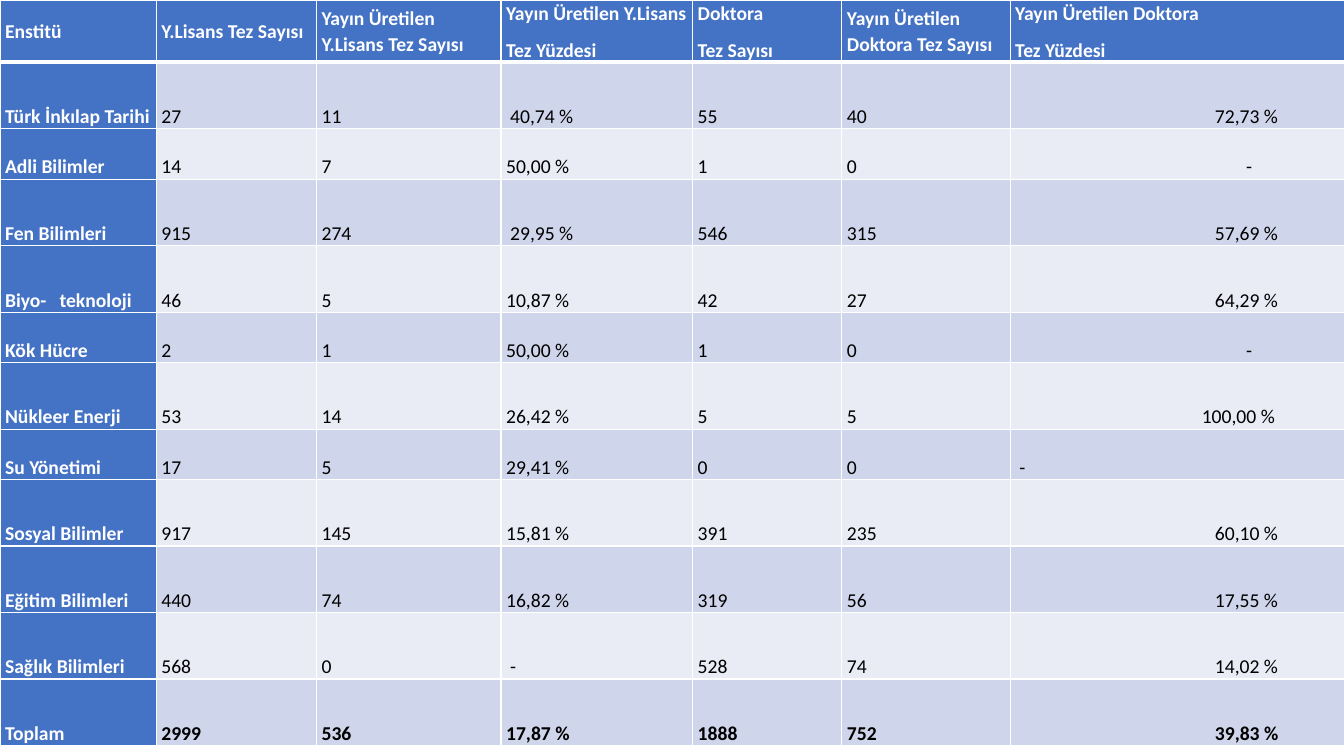
from dataclasses import dataclass

from lxml.etree import SubElement
from pptx import Presentation
from pptx.dml.color import RGBColor
from pptx.enum.text import MSO_ANCHOR
from pptx.oxml.ns import qn
from pptx.table import _Cell
from pptx.util import Emu, Pt

PX = 9144
SLIDE_WIDTH, SLIDE_HEIGHT = 1333, 750
COLUMN_WIDTHS = (155, 159, 183, 190, 148, 167, 407)
HEADER_HEIGHT, TALL, SHORT = 61, 66, 50
MASTERS_RATE, DOCTORAL_RATE = 3, 6
NUDGE, RATE, FULL_RATE, DASH = 4, 198, 185, 229
NAME_TAB = 54


@dataclass(frozen=True)
class Theme:
    font: str = "Calibri"
    size: int = 14
    accent: str = "4472C4"
    bands: tuple[str, str] = ("CFD5EA", "E9EBF5")
    light: str = "FFFFFF"
    dark: str = "000000"
    thin: int = 1
    thick: int = 3
    line_spacing: float = 1.07
    space_after: int = 8


@dataclass(frozen=True)
class Institute:
    height: int
    values: tuple[str, ...]
    masters_indent: int = 0
    doctoral_indent: int = RATE
    bold: bool = False


@dataclass(frozen=True)
class CellStyle:
    fill: str
    color: str
    bold: bool
    anchor: MSO_ANCHOR = MSO_ANCHOR.BOTTOM
    indent: int = 0
    top: int = 1
    bottom: int = 1


THEME = Theme()
HEADERS = (
    "Enstitü",
    "Y.Lisans Tez Sayısı",
    "Yayın Üretilen Y.Lisans Tez Sayısı",
    "Yayın Üretilen Y.Lisans\nTez Yüzdesi",
    "Doktora\nTez Sayısı",
    "Yayın Üretilen Doktora Tez Sayısı",
    "Yayın Üretilen Doktora\nTez Yüzdesi",
)
INSTITUTES = (
    Institute(TALL, ("Türk İnkılap Tarihi", "27", "11", "40,74 %", "55", "40", "72,73 %"), NUDGE),
    Institute(SHORT, ("Adli Bilimler", "14", "7", "50,00 %", "1", "0", "-"), 0, DASH),
    Institute(TALL, ("Fen Bilimleri", "915", "274", "29,95 %", "546", "315", "57,69 %"), NUDGE),
    Institute(TALL, ("Biyo-\tteknoloji", "46", "5", "10,87 %", "42", "27", "64,29 %")),
    Institute(SHORT, ("Kök Hücre", "2", "1", "50,00 %", "1", "0", "-"), 0, DASH),
    Institute(TALL, ("Nükleer Enerji", "53", "14", "26,42 %", "5", "5", "100,00 %"), 0, FULL_RATE),
    Institute(SHORT, ("Su Yönetimi", "17", "5", "29,41 %", "0", "0", "-"), 0, NUDGE),
    Institute(TALL, ("Sosyal Bilimler", "917", "145", "15,81 %", "391", "235", "60,10 %")),
    Institute(TALL, ("Eğitim Bilimleri", "440", "74", "16,82 %", "319", "56", "17,55 %")),
    Institute(TALL, ("Sağlık Bilimleri", "568", "0", "-", "528", "74", "14,02 %"), NUDGE),
    Institute(TALL, ("Toplam", "2999", "536", "17,87 %", "1888", "752", "39,83 %"), bold=True),
)


def px(length: int) -> Emu:
    return Emu(length * PX)


def apply(target: object, values: dict[str, object]) -> None:
    for name, value in values.items():
        setattr(target, name, value)


def draw_borders(cell: _Cell, style: CellStyle) -> None:
    tc_pr = cell._tc.get_or_add_tcPr()
    widths = {"a:lnL": THEME.thin, "a:lnR": THEME.thin, "a:lnT": style.top, "a:lnB": style.bottom}
    for tag, width in widths.items():
        ln = SubElement(tc_pr, qn(tag), w=str(Pt(width)))
        fill = SubElement(ln, qn("a:solidFill"))
        SubElement(fill, qn("a:srgbClr"), val=THEME.light)


def fill_cell(cell: _Cell, text: str, style: CellStyle) -> None:
    draw_borders(cell, style)
    cell.fill.solid()
    cell.fill.fore_color.rgb = RGBColor.from_string(style.fill)
    apply(cell, {
        "margin_left": px(5), "margin_right": px(5), "margin_top": 0, "margin_bottom": 0,
        "vertical_anchor": style.anchor,
    })
    tf = cell.text_frame
    for i, line in enumerate(text.split("\n")):
        p = tf.add_paragraph() if i else tf.paragraphs[0]
        apply(p, {"line_spacing": THEME.line_spacing, "space_after": Pt(THEME.space_after)})
        p_pr = p._p.get_or_add_pPr()
        if style.indent:
            p_pr.set("marL", str(px(style.indent)))
            p_pr.set("indent", "0")
        if "\t" in line:
            tabs = SubElement(p_pr, qn("a:tabLst"))
            SubElement(tabs, qn("a:tab"), pos=str(px(NAME_TAB)), algn="l")
        r = p.add_run()
        r.text = line
        apply(r.font, {"name": THEME.font, "size": Pt(THEME.size), "bold": style.bold})
        r.font.color.rgb = RGBColor.from_string(style.color)


def body_style(institute: Institute, row: int, column: int) -> CellStyle:
    top = THEME.thick if row == 1 else THEME.thin
    if column == 0:
        return CellStyle(THEME.accent, THEME.light, True, top=top)
    indents = {MASTERS_RATE: institute.masters_indent, DOCTORAL_RATE: institute.doctoral_indent}
    band = THEME.bands[(row - 1) % 2]
    return CellStyle(band, THEME.dark, institute.bold, indent=indents.get(column, 0), top=top)


def main() -> None:
    """Build the slide with the thesis table and save it."""
    prs = Presentation()
    apply(prs, {"slide_width": px(SLIDE_WIDTH), "slide_height": px(SLIDE_HEIGHT)})
    s = prs.slides.add_slide(prs.slide_layouts[6])
    heights = (HEADER_HEIGHT, *(institute.height for institute in INSTITUTES))
    table = s.shapes.add_table(
        len(heights), len(COLUMN_WIDTHS), 0, 0, px(sum(COLUMN_WIDTHS)), px(sum(heights))
    ).table
    for column, width in zip(table.columns, COLUMN_WIDTHS):
        column.width = px(width)
    for row, height in zip(table.rows, heights):
        row.height = px(height)
    header = CellStyle(THEME.accent, THEME.light, True, MSO_ANCHOR.MIDDLE, bottom=THEME.thick)
    for j, text in enumerate(HEADERS):
        fill_cell(table.cell(0, j), text, header)
    for i, institute in enumerate(INSTITUTES, start=1):
        for j, text in enumerate(institute.values):
            fill_cell(table.cell(i, j), text, body_style(institute, i, j))
    prs.save("out.pptx")


if __name__ == "__main__":
    main()
